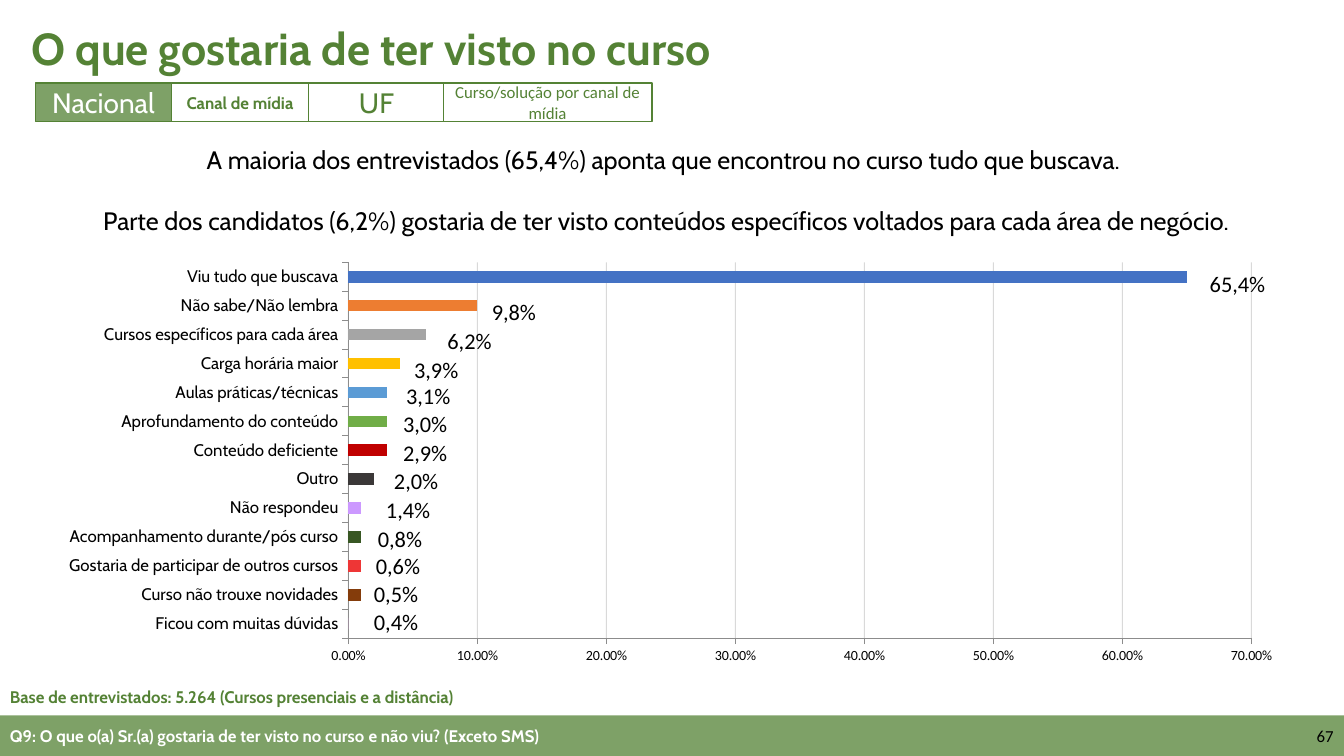
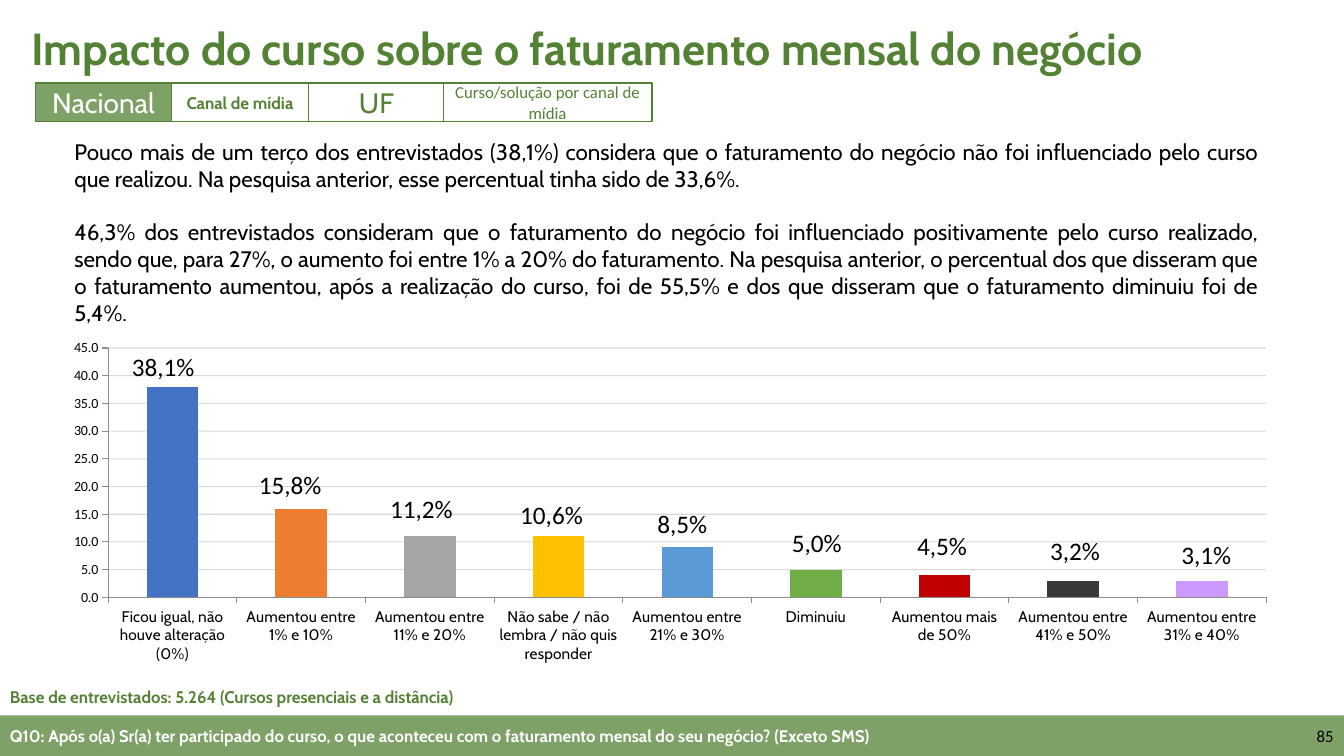
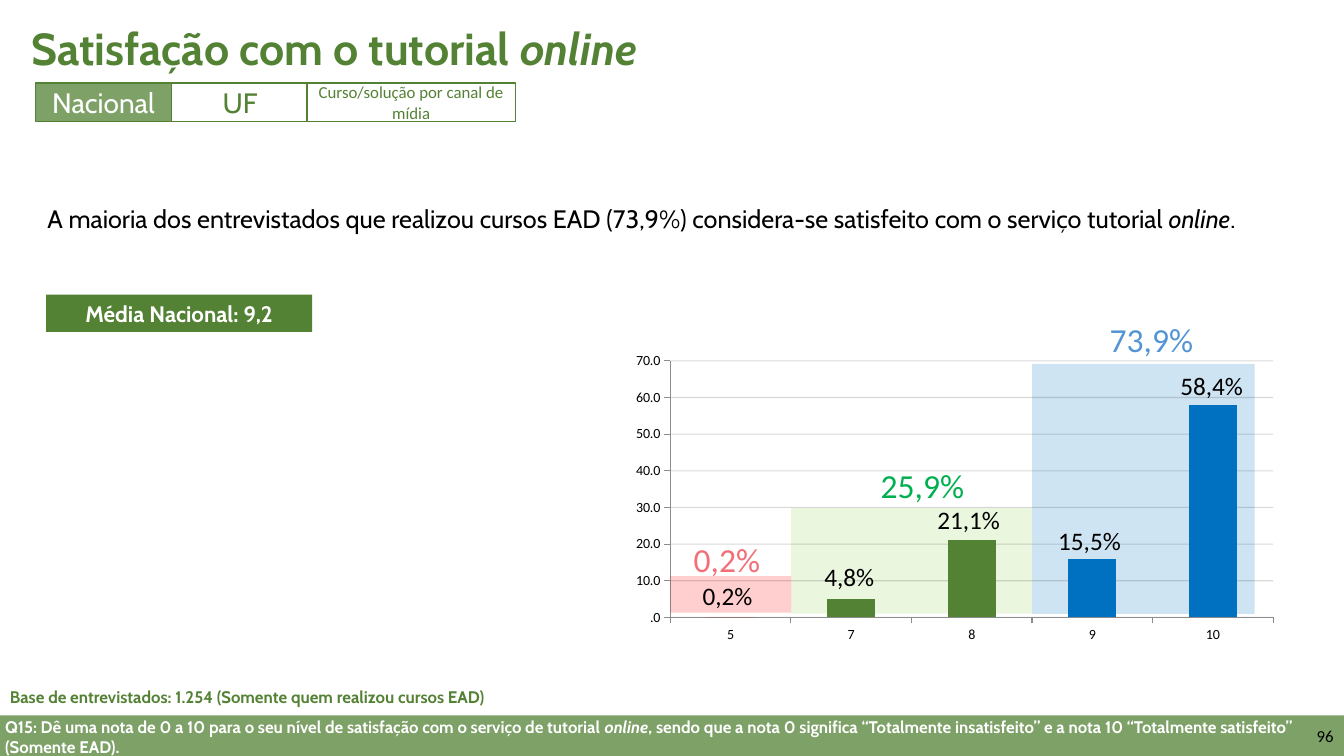
from lxml import etree
from pptx import Presentation
from pptx.chart.data import CategoryChartData
from pptx.dml.color import RGBColor
from pptx.enum.chart import XL_CHART_TYPE as ChartType, XL_TICK_MARK as TickMark
from pptx.enum.shapes import MSO_CONNECTOR as Connector, MSO_SHAPE as Preset
from pptx.enum.text import MSO_ANCHOR as Anchor, MSO_AUTO_SIZE as AutoSize, PP_ALIGN as Align
from pptx.oxml import parse_xml
from pptx.oxml.ns import nsdecls, qn
from pptx.util import Pt

# Colours and fonts
GREEN = RGBColor(0x54, 0x82, 0x35)
WHITE = RGBColor(0xFF, 0xFF, 0xFF)
BLACK = RGBColor(0x00, 0x00, 0x00)
AXIS_GREY = RGBColor(0x8C, 0x8C, 0x8C)
BLUE = RGBColor(0x44, 0x72, 0xC4)
ORANGE = RGBColor(0xED, 0x7D, 0x31)
GREY = RGBColor(0xA5, 0xA5, 0xA5)
GOLD = RGBColor(0xFF, 0xC0, 0x00)
SKY = RGBColor(0x5B, 0x9B, 0xD5)
LEAF = RGBColor(0x70, 0xAD, 0x47)
CRIMSON = RGBColor(0xC0, 0x00, 0x00)
CHARCOAL = RGBColor(0x3B, 0x38, 0x38)
LILAC = RGBColor(0xCC, 0x99, 0xFF)
FOREST = RGBColor(0x38, 0x57, 0x23)
RED = RGBColor(0xEE, 0x36, 0x36)
BROWN = RGBColor(0x84, 0x3C, 0x0B)
PINK = RGBColor(0xFF, 0x99, 0xFF)
COBALT = RGBColor(0x00, 0x70, 0xC0)
LIME = RGBColor(0x92, 0xD0, 0x50)
PURE_RED = RGBColor(0xFF, 0x00, 0x00)
SALMON = RGBColor(0xF2, 0x6F, 0x78)
EMERALD = RGBColor(0x00, 0xB0, 0x50)
SOFT_BLUE = RGBColor(0x53, 0x95, 0xD4)
HEAD_FONT, PLAIN_FONT = "Cabin", "Calibri"

# Navigation tabs: label, width, size, font, bold, active
NATIONAL = ("Nacional", 97.5, 20, HEAD_FONT, False, True)
MEDIA = ("Canal de mídia", 97.5, 12, HEAD_FONT, True, False)
STATE = ("UF", 97.5, 20, HEAD_FONT, False, False)
COURSE = ("Curso/solução por canal de mídia", 149, 12, PLAIN_FONT, False, False)

# Text between asterisks is italic.
# Bars: category, value, value label, colour, left and top of the value label
WISHES = {
    "title": "O que gostaria de ter visto no curso",
    "tabs": [NATIONAL, MEDIA, STATE, COURSE],
    "base": "Base de entrevistados: 5.264 (Cursos presenciais e a distância)",
    "question": "Q9: O que o(a) Sr.(a) gostaria de ter visto no curso\u00a0e não viu? (Exceto SMS)",
    "number": "67",
    "text": ["A maioria dos entrevistados (65,4%) aponta que encontrou no curso tudo que buscava. ",
             "Parte dos candidatos (6,2%) gostaria de ter visto conteúdos específicos voltados "
             "para cada área de negócio."],
    "bars": [
        ("Ficou com muitas dúvidas", 0, "0,4%", PINK, 260, 430.6),
        ("Curso não trouxe novidades", 0.01, "0,5%", BROWN, 260, 411),
        ("Gostaria de participar de outros cursos", 0.01, "0,6%", RED, 261.4, 391),
        ("Acompanhamento durante/pós curso", 0.01, "0,8%", FOREST, 262.8, 371.5),
        ("Não respondeu", 0.01, "1,4%", LILAC, 268.6, 351),
        ("Outro", 0.02, "2,0%", CHARCOAL, 274.3, 330.2),
        ("Conteúdo deficiente", 0.03, "2,9%", CRIMSON, 280.8, 310.3),
        ("Aprofundamento do conteúdo", 0.03, "3,0%", LEAF, 280.8, 289.4),
        ("Aulas práticas/técnicas", 0.03, "3,1%", SKY, 283, 269.3),
        ("Carga horária maior", 0.04, "3,9%", GOLD, 288.7, 250.6),
        ("Cursos específicos para cada área", 0.06, "6,2%", GREY, 312.5, 230.4),
        ("Não sabe/Não lembra", 0.1, "9,8%", ORANGE, 344.2, 209.2),
        ("Viu tudo que buscava", 0.65, "65,4%", BLUE, 857, 189.4),
    ],
}
REVENUE = {
    "title": "Impacto do curso sobre o faturamento mensal do negócio",
    "tabs": [NATIONAL, MEDIA, STATE, COURSE],
    "base": "Base de entrevistados: 5.264 (Cursos presenciais e a distância)",
    "question": "Q10: Após o(a) Sr(a) ter participado do curso, o que aconteceu com o "
                "faturamento mensal do seu negócio? (Exceto SMS)",
    "number": "85",
    "text": ["Pouco mais de um terço dos entrevistados (38,1%) considera que o faturamento do "
             "negócio não foi influenciado pelo curso que realizou. Na pesquisa anterior, esse "
             "percentual tinha sido de 33,6%.",
             "46,3% dos entrevistados consideram que o faturamento do negócio foi influenciado "
             "positivamente pelo curso realizado, sendo que, para 27%, o aumento foi entre 1% a "
             "20% do faturamento. Na pesquisa anterior, o percentual dos que disseram que o "
             "faturamento aumentou, após a realização do curso, foi de 55,5% e dos que disseram "
             "que o faturamento diminuiu foi de 5,4%."],
    "bars": [
        ("Ficou igual, não houve alteração (0%)", 38, "38,1%", BLUE, 87.1, 247.7),
        ("Aumentou entre 1% e 10%", 16, "15,8%", ORANGE, 177.8, 332),
        ("Aumentou entre 11% e 20%", 11, "11,2%", GREY, 271.6, 348.5),
        ("Não sabe / não lembra / não quis responder", 11, "10,6%", GOLD, 364.5, 352.8),
        ("Aumentou entre 21% e 30%", 9, "8,5%", SKY, 462.4, 359.6),
        ("Diminuiu", 5, "5,0%", LEAF, 558.5, 373),
        ("Aumentou mais de 50%", 4, "4,5%", CRIMSON, 648, 375),
        ("Aumentou entre 41% e 50%", 3, "3,2%", CHARCOAL, 743, 378.7),
        ("Aumentou entre 31% e 40%", 3, "3,1%", LILAC, 836.8, 381.6),
    ],
}
TUTORIAL = {
    "title": "Satisfação com o tutorial *online*",
    "tabs": [NATIONAL, STATE, COURSE],
    "base": "Base de entrevistados: 1.254 (Somente quem realizou cursos EAD)",
    "question": "",
    "long_question": "Q15: Dê uma nota de 0 a 10 para o seu nível de satisfação com o serviço de "
                     "tutorial *online*, sendo que a nota 0 significa “Totalmente insatisfeito” "
                     "e a nota 10 “Totalmente satisfeito” (Somente EAD).",
    "number": "96",
    "text": ["A maioria dos entrevistados que realizou cursos EAD (73,9%) considera-se satisfeito "
             "com o serviço tutorial *online*."],
    "mean": "Média Nacional: 9,2",
    "bars": [
        ("5", 0, "0,2%", CRIMSON, 494.8, 411),
        ("7", 5, "4,8%", GREEN, 581.8, 397.4),
        ("8", 21, "21,1%", GREEN, 662.4, 357),
        ("9", 16, "15,5%", COBALT, 748.8, 371.5),
        ("10", 58, "58,4%", COBALT, 836, 260.9),
    ],
    # Score groups: band box, band colour, total, total colour, left and top of the total
    "groups": [
        ((737.3, 260, 159, 178.5), COBALT, "73,9%", SOFT_BLUE, 785.5, 224),
        ((565.2, 362.7, 172, 75.6), LIME, "25,9%", EMERALD, 622, 328.3),
        ((478.8, 411.5, 86.4, 26.2), PURE_RED, "0,2%", SALMON, 488.4, 381.3),
    ],
}


def write(frame, paragraphs, size, color=BLACK, font=HEAD_FONT, bold=False,
          align=Align.LEFT, anchor=Anchor.TOP, gap=0):
    frame.word_wrap = True
    frame.auto_size = AutoSize.NONE
    frame.vertical_anchor = anchor
    for i, text in enumerate(paragraphs):
        para = frame.add_paragraph() if i else frame.paragraphs[0]
        para.alignment = align
        para.space_before = Pt(gap if i else 0)
        for j, piece in enumerate(text.split("*")):
            if piece:
                span = para.add_run()
                span.text = piece
                span.font.size, span.font.name = Pt(size), font
                span.font.bold, span.font.italic = bold, j % 2 == 1
                span.font.color.rgb = color


def add_text(page, box, paragraphs, size, **style):
    area = page.shapes.add_textbox(*map(Pt, box))
    write(area.text_frame, paragraphs, size, **style)


def set_alpha(root, opacity):
    for color in root.iter(qn("a:srgbClr")):
        etree.SubElement(color, qn("a:alpha")).set("val", str(opacity * 1000))


def add_block(page, box, fill, opacity=100, line=None):
    block = page.shapes.add_shape(Preset.RECTANGLE, *map(Pt, box))
    block.shadow.inherit = False
    block.fill.solid()
    block.fill.fore_color.rgb = fill
    if opacity < 100:
        set_alpha(block.element.spPr, opacity)
    if line is None:
        block.line.fill.background()
    else:
        block.line.color.rgb = line
        block.line.width = Pt(1)
    return block


def add_bars(page, content, box, plot_box, kind, top_value, step, number_format,
             tick_size, tick_font):
    bars = content["bars"]
    data = CategoryChartData()
    data.categories = [bar[0] for bar in bars]
    data.add_series("Series 1", [bar[1] for bar in bars])
    chart = page.shapes.add_chart(kind, *map(Pt, box), data).chart
    chart.has_legend = chart.has_title = False
    chart.font.size, chart.font.name = Pt(10), PLAIN_FONT
    chart.font.color.rgb = BLACK

    # Bars
    plot = chart.plots[0]
    plot.gap_width = 150
    plot.vary_by_categories = False
    for i, bar in enumerate(bars):
        fill = plot.series[0].points[i].format.fill
        fill.solid()
        fill.fore_color.rgb = bar[3]

    # Axes
    for axis in (chart.category_axis, chart.value_axis):
        axis.major_tick_mark, axis.minor_tick_mark = TickMark.OUTSIDE, TickMark.NONE
        axis.format.line.color.rgb = AXIS_GREY
        axis.format.line.width = Pt(0.75)
    labels = chart.category_axis.tick_labels.font
    labels.size, labels.name = Pt(tick_size), tick_font
    labels.color.rgb = BLACK
    values = chart.value_axis
    values.minimum_scale, values.maximum_scale, values.major_unit = 0, top_value, step
    values.tick_labels.number_format = number_format
    values.tick_labels.number_format_is_linked = False
    values.has_major_gridlines = True
    values.major_gridlines.format.line.color.rgb = BLACK
    values.major_gridlines.format.line.width = Pt(0.75)
    for grid in chart.element.iter(qn("c:majorGridlines")):
        set_alpha(grid, 15)

    # Clear background and fixed plot area, as shares of the chart
    chart.element.find(qn("c:chart")).addnext(parse_xml(
        f'<c:spPr {nsdecls("c", "a")}><a:noFill/><a:ln><a:noFill/></a:ln></c:spPr>'))
    area = next(chart.element.iter(qn("c:plotArea")))
    for old in area.findall(qn("c:layout")):
        area.remove(old)
    left, top, width, height = box
    shares = {"x": (plot_box[0] - left) / width, "y": (plot_box[1] - top) / height,
              "w": plot_box[2] / width, "h": plot_box[3] / height}
    parts = '<c:layoutTarget val="inner"/><c:xMode val="edge"/><c:yMode val="edge"/>'
    parts += "".join(f'<c:{key} val="{share:.5f}"/>' for key, share in shares.items())
    area.insert(0, parse_xml(f'<c:layout {nsdecls("c")}><c:manualLayout>{parts}'
                             '</c:manualLayout></c:layout>'))


def add_values(page, content, size):
    for _, _, label, _, left, top in content["bars"]:
        add_text(page, (left, top, 70, size + 11), [label], size, font=PLAIN_FONT)


def add_frame(page, content):
    # Title
    title = page.shapes.title
    title.left, title.top, title.width, title.height = map(Pt, (15.2, 8, 934.5, 52))
    write(title.text_frame, [content["title"]], 32, color=GREEN, bold=True, anchor=Anchor.MIDDLE)

    # Divider behind the tabs
    divider = page.shapes.add_connector(Connector.STRAIGHT, Pt(201.6), Pt(59.5), Pt(201.6), Pt(86.8))
    divider.line.color.rgb = WHITE
    divider.line.width = Pt(0.5)
    etree.SubElement(divider.element.spPr, qn("a:effectLst"))

    # Tabs
    left = 25.2
    for label, width, size, font, bold, active in content["tabs"]:
        last = label == COURSE[0]
        tab = add_block(page, (left - last, 59.4, width, 27.3), GREEN if active else WHITE,
                        100 if last else 75, GREEN)
        write(tab.text_frame, [label], size, color=WHITE if active else GREEN, font=font,
              bold=bold, align=Align.CENTER, anchor=Anchor.MIDDLE)
        left += width

    # Footer
    band = add_block(page, (0, 511, 960, 29), GREEN, 75)
    if content["question"]:
        write(band.text_frame, [content["question"]], 12, color=WHITE, bold=True,
              anchor=Anchor.MIDDLE)
    add_text(page, (926.8, 511, 33, 29), [content["number"]], 12, font=PLAIN_FONT,
             align=Align.RIGHT, anchor=Anchor.MIDDLE)
    add_text(page, (0, 487, 365, 21.8), [content["base"]], 12, color=GREEN, bold=True)


def build_wishes(page):
    add_bars(page, WISHES, (31.7, 181.4, 895, 298.8), (248.9, 187.4, 645, 268.5),
             ChartType.BAR_CLUSTERED, 0.7, 0.1, "0.00%", 12, HEAD_FONT)
    add_frame(page, WISHES)
    add_text(page, (25.2, 99.4, 901.4, 72.7), WISHES["text"], 18, align=Align.CENTER, gap=21.8)
    add_values(page, WISHES, 16)


def build_revenue(page):
    add_bars(page, REVENUE, (35.3, 238.3, 887.8, 241.2), (77.3, 248.6, 827.2, 178.2),
             ChartType.COLUMN_CLUSTERED, 45, 5, "###0.0", 11, HEAD_FONT)
    add_frame(page, REVENUE)
    add_text(page, (46, 95, 860.4, 143.3), REVENUE["text"], 16, align=Align.JUSTIFY, gap=19)
    add_values(page, REVENUE, 18)


def build_tutorial(page):
    *back_groups, front_group = TUTORIAL["groups"]
    for box, color, *_ in back_groups:
        add_block(page, box, color, 19)
    add_bars(page, TUTORIAL, (445, 247.7, 474.5, 216), (478.8, 257.8, 430.7, 183.3),
             ChartType.COLUMN_CLUSTERED, 70, 10, "###.0", 10, PLAIN_FONT)
    add_frame(page, TUTORIAL)
    add_text(page, (-3.4, 508.3, 954, 36), [TUTORIAL["long_question"]], 12, color=WHITE, bold=True)
    add_block(page, front_group[0], front_group[1], 19)
    add_values(page, TUTORIAL, 18)
    add_text(page, (26.8, 141.8, 890, 51), TUTORIAL["text"], 18, align=Align.JUSTIFY)
    for _, _, total, color, left, top in TUTORIAL["groups"]:
        add_text(page, (left, top, 82, 36), [total], 24, color=color, font=PLAIN_FONT)
    mean = add_block(page, (33, 210.5, 190, 26.6), GREEN)
    write(mean.text_frame, [TUTORIAL["mean"]], 16, color=WHITE, bold=True, align=Align.CENTER,
          anchor=Anchor.MIDDLE)


def main():
    deck = Presentation()
    deck.slide_width, deck.slide_height = Pt(960), Pt(540)
    for build in (build_wishes, build_revenue, build_tutorial):
        build(deck.slides.add_slide(deck.slide_layouts[5]))
    deck.save("out.pptx")


if __name__ == "__main__":
    main()
